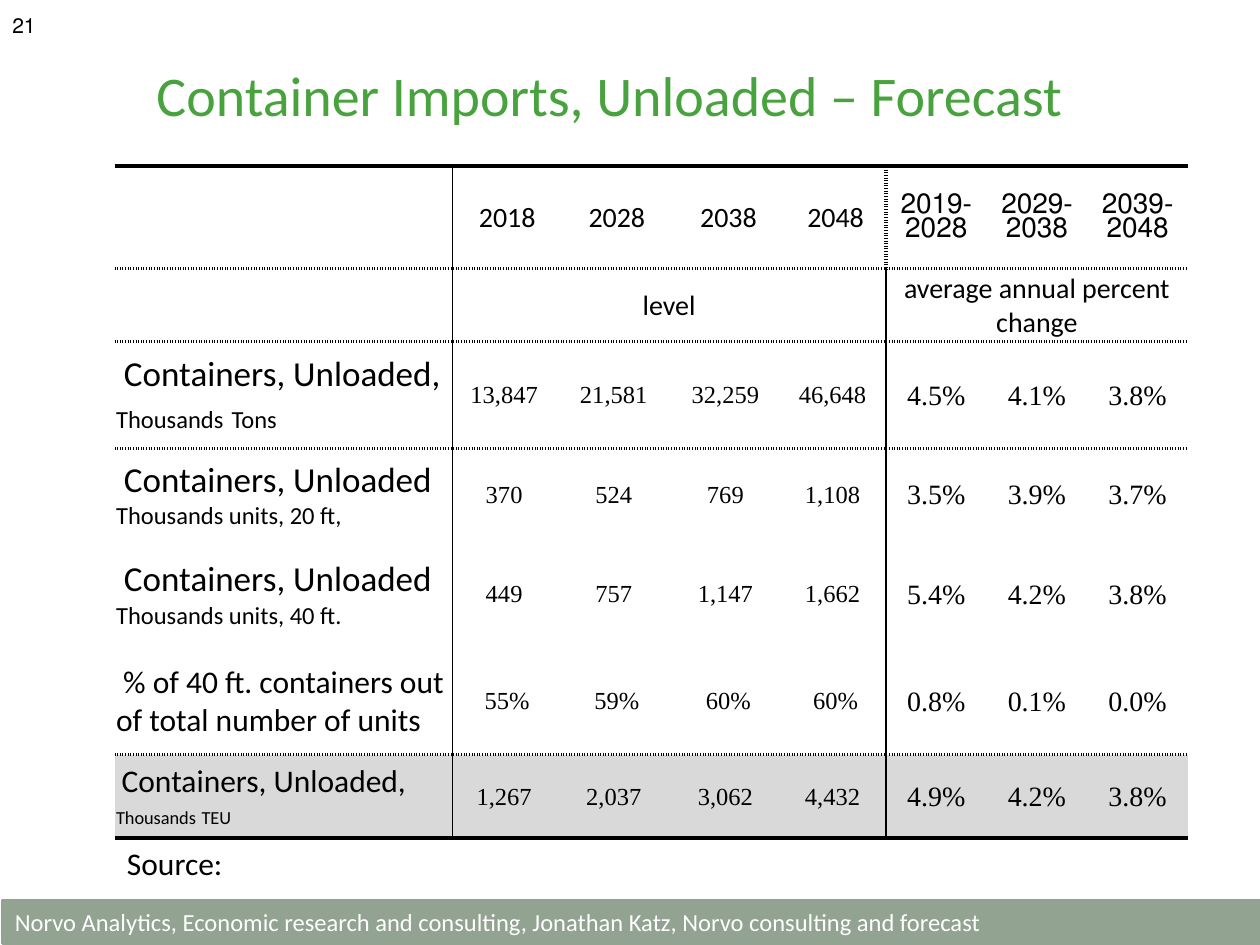
from lxml.etree import SubElement
from pptx import Presentation
from pptx.dml.color import RGBColor
from pptx.enum.shapes import MSO_SHAPE as Shape
from pptx.enum.text import MSO_ANCHOR as Anchor, PP_ALIGN as Align
from pptx.oxml.ns import qn
from pptx.util import Cm, Pt

COLORS = {"title": "48A23E", "footer": "92A391", "ink": "000000",
          "white": "FFFFFF", "total": "D9D9D9"}
SANS, SERIF = "Calibri", "Times New Roman"
THICK, DOTTED, THIN = (2.25, "solid"), (2.25, "sysDot"), (1, "solid")

COLUMN_WIDTHS = [6.81, 2.21, 2.21, 2.29] + [2.03] * 4
ROW_HEIGHTS = [2.06, 1.47, 2.16, 1.85, 2.16, 2.16, 1.68]
ROW_EDGES = [THICK, DOTTED, DOTTED, DOTTED, None, None, DOTTED, THICK]
COLUMN_EDGES = {1: THIN, 5: THIN}

LEVEL_YEARS = ["2018", "2028", "2038", "2048"]
CHANGE_YEARS = ["2019-2028", "2029-2038", "2039-2048"]
SERIES = [
    ([[(" Containers, Unloaded,", 20)], [("Thousands", 14), (" ", 20), ("Tons", 14)]],
     ["13,847 ", "21,581 ", "32,259 ", "46,648 "], ["4.5%", "4.1%", "3.8%"]),
    ([[(" Containers, Unloaded", 20)], [("Thousands units, 20 ft,", 14)]],
     ["370 ", "524 ", "769 ", "1,108 "], ["3.5%", "3.9%", "3.7%"]),
    ([[(" Containers, Unloaded", 20)], [("Thousands units, 40 ft.", 14)]],
     ["449 ", "757 ", "1,147 ", "1,662 "], ["5.4%", "4.2%", "3.8%"]),
    ([[(" % of 40 ft. containers out of total number of units", 18)]],
     ["55%", "59%", "60%", "60%"], ["0.8%", "0.1%", "0.0%"]),
    ([[(" ", 14), ("Containers, Unloaded,", 18)],
      [("Thousands", 10.5), (" ", 14), ("TEU", 10.5)]],
     ["1,267 ", "2,037 ", "3,062 ", "4,432 "], ["4.9%", "4.2%", "3.8%"]),
]


class SlideBuilder:
    def __init__(self, deck):
        self.slide = deck.slides.add_slide(deck.slide_layouts[5])

    def color(self, name):
        return RGBColor.from_string(COLORS[name])

    def style(self, para, size, color="ink", font=SANS, align=Align.LEFT, rtl=False):
        para.alignment = align
        para.font.size = Pt(size)
        para.font.name = font
        para.font.color.rgb = self.color(color)
        if rtl:
            para._p.get_or_add_pPr().set("rtl", "1")

    def set_text(self, shape, text, size, color="ink", anchor=Anchor.MIDDLE, rtl=False):
        frame = shape.text_frame
        frame.word_wrap = True
        frame.vertical_anchor = anchor
        frame.text = text
        self.style(frame.paragraphs[0], size, color, rtl=rtl)

    def title(self, text, left, top, width, height):
        box = self.slide.shapes.title
        box.left, box.top, box.width, box.height = map(Cm, (left, top, width, height))
        self.set_text(box, text, 32, "title")

    def textbox(self, text, size, left, top, width, height, **options):
        box = self.slide.shapes.add_textbox(*map(Cm, (left, top, width, height)))
        self.set_text(box, text, size, **options)

    def band(self, text, left, top, width, height):
        box = self.slide.shapes.add_shape(
            Shape.RECTANGLE, *map(Cm, (left, top, width, height)))
        box.shadow.inherit = False
        box.fill.solid()
        box.fill.fore_color.rgb = self.color("footer")
        box.line.color.rgb = self.color("footer")
        box.line.width = Pt(2)
        self.set_text(box, text, 14, "white")

    def table(self, left, top):
        frame = self.slide.shapes.add_table(
            len(ROW_HEIGHTS), len(COLUMN_WIDTHS), Cm(left), Cm(top),
            Cm(sum(COLUMN_WIDTHS)), Cm(sum(ROW_HEIGHTS)))
        grid = frame.table
        grid.first_row = grid.horz_banding = False
        for column, width in zip(grid.columns, COLUMN_WIDTHS):
            column.width = Cm(width)
        for row, height in zip(grid.rows, ROW_HEIGHTS):
            row.height = Cm(height)
        return grid

    def borders(self, cell, edges):
        properties = cell._tc.get_or_add_tcPr()
        for side, edge in zip("LRTB", edges):
            line = SubElement(properties, qn(f"a:ln{side}"))
            if edge is None:
                SubElement(line, qn("a:noFill"))
                continue
            width, dash = edge
            line.set("w", str(Pt(width)))
            fill = SubElement(line, qn("a:solidFill"))
            SubElement(fill, qn("a:srgbClr"), val=COLORS["ink"])
            SubElement(line, qn("a:prstDash"), val=dash)

    def format_cell(self, cell, edges, fill=None):
        cell.vertical_anchor = Anchor.MIDDLE
        cell.margin_left = cell.margin_right = cell.margin_top = Cm(0.03)
        cell.margin_bottom = 0
        self.borders(cell, edges)
        if fill:
            cell.fill.solid()
            cell.fill.fore_color.rgb = self.color(fill)
        else:
            cell.fill.background()

    def value(self, cell, text, size, font=SANS, rtl=False):
        cell.text = text
        para = cell.text_frame.paragraphs[0]
        self.style(para, size, font=font, align=Align.CENTER, rtl=rtl)
        if rtl:
            para.line_spacing = 0.87

    def label(self, cell, lines):
        frame = cell.text_frame
        for index, spans in enumerate(lines):
            para = frame.add_paragraph() if index else frame.paragraphs[0]
            self.style(para, spans[0][1])
            for text, size in spans:
                span = para.add_run()
                span.text = text
                span.font.size = Pt(size)


def column_edge(row, column):
    return DOTTED if (row, column) == (0, 5) else COLUMN_EDGES.get(column)


def fill_table(builder, grid):
    last_row = len(ROW_HEIGHTS) - 1
    for row in range(len(ROW_HEIGHTS)):
        for column in range(len(COLUMN_WIDTHS)):
            edges = (column_edge(row, column), column_edge(row, column + 1),
                     ROW_EDGES[row], ROW_EDGES[row + 1])
            builder.format_cell(grid.cell(row, column), edges,
                                "total" if row == last_row else None)
    for column, year in enumerate(LEVEL_YEARS + CHANGE_YEARS, 1):
        builder.value(grid.cell(0, column), year, 16, rtl=year in CHANGE_YEARS)
    for first, last, text in ((1, 4, "level"), (5, 7, "average annual percent change")):
        grid.cell(1, first).merge(grid.cell(1, last))
        builder.value(grid.cell(1, first), text, 16)
    for row, (lines, levels, changes) in enumerate(SERIES, 2):
        builder.label(grid.cell(row, 0), lines)
        for column, text in enumerate(levels + changes, 1):
            size = 14 if column <= len(levels) else 16
            builder.value(grid.cell(row, column), text, size, SERIF)


def main():
    deck = Presentation()
    deck.slide_width, deck.slide_height = Cm(25.4), Cm(19.05)
    builder = SlideBuilder(deck)
    builder.band("Norvo Analytics, Economic research and consulting, Jonathan Katz, "
                 "Norvo consulting and forecast", 0.05, 18.16, 25.43, 0.86)
    builder.title("Container Imports, Unloaded – Forecast", 2.9, 0.38, 21, 3.05)
    builder.textbox("21", 12, 0, 0, 5.92, 1.02, rtl=True)
    fill_table(builder, builder.table(2.31, 3.35))
    builder.textbox("Source:", 18, 2.31, 16.89, 21.59, 1.02, anchor=Anchor.TOP)
    deck.save("out.pptx")


if __name__ == "__main__":
    main()
